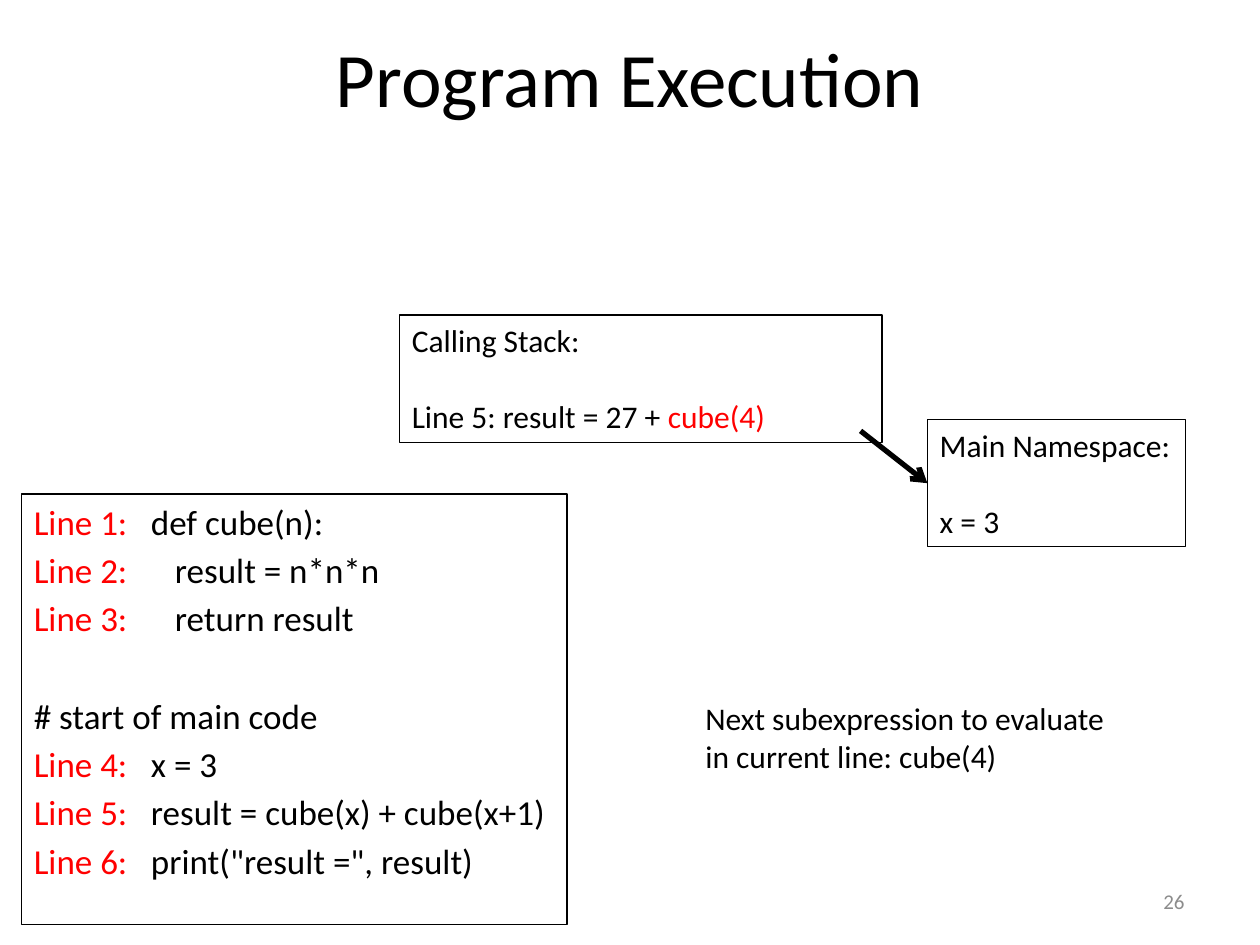
from lxml import etree
from pptx import Presentation
from pptx.dml.color import RGBColor
from pptx.enum.shapes import MSO_CONNECTOR, MSO_SHAPE
from pptx.enum.text import MSO_ANCHOR, PP_ALIGN
from pptx.oxml.ns import qn
from pptx.util import Inches, Pt

RECTANGLE = MSO_SHAPE.RECTANGLE
STRAIGHT = MSO_CONNECTOR.STRAIGHT
TOP, MIDDLE = MSO_ANCHOR.TOP, MSO_ANCHOR.MIDDLE
LEFT, CENTER, RIGHT = PP_ALIGN.LEFT, PP_ALIGN.CENTER, PP_ALIGN.RIGHT
LEFT_SIDE = 1

BLACK, RED, GRAY = "000000", "FF0000", "8C8C8C"
BLANK_LINE = 22  # points: height of one line of 18 point text


def color(value):
    return RGBColor.from_string(value)


class SlideBuilder:
    font = "Calibri"

    def __init__(self, slide):
        self.slide = slide

    def add_paragraphs(self, shape, paragraphs, size, align=LEFT, anchor=TOP, wrap=True):
        """Each paragraph is (space before, tab stop or None, [(text, colour)])."""
        frame = shape.text_frame
        frame.word_wrap = wrap
        frame.vertical_anchor = anchor
        for index, (space, tab, runs) in enumerate(paragraphs):
            paragraph = frame.paragraphs[0] if index == 0 else frame.add_paragraph()
            paragraph.alignment = align
            paragraph.space_before = Pt(space)
            if tab is not None:
                properties = paragraph._p.get_or_add_pPr()
                tabs = etree.SubElement(properties, qn("a:tabLst"))
                etree.SubElement(tabs, qn("a:tab"), pos=str(Inches(tab)), algn="l")
            for text, text_color in runs:
                run = paragraph.add_run()
                run.text = text
                run.font.name = self.font
                run.font.size = Pt(size)
                run.font.color.rgb = color(text_color)

    def text(self, left, top, width, height, paragraphs, size, **layout):
        shape = self.slide.shapes.add_textbox(
            Inches(left), Inches(top), Inches(width), Inches(height))
        self.add_paragraphs(shape, paragraphs, size, **layout)

    def box(self, left, top, width, height, paragraphs, size):
        shape = self.slide.shapes.add_shape(
            RECTANGLE, Inches(left), Inches(top), Inches(width), Inches(height))
        shape.shadow.inherit = False
        shape.fill.background()
        shape.line.color.rgb = color(BLACK)
        shape.line.width = Pt(0.75)
        self.add_paragraphs(shape, paragraphs, size)
        return shape

    def arrow_to(self, left, top, target, side):
        start = Inches(left), Inches(top)
        connector = self.slide.shapes.add_connector(STRAIGHT, *start, *start)
        connector.end_connect(target, side)
        connector.line.color.rgb = color(BLACK)
        connector.line.width = Pt(3)
        properties = connector._element.spPr
        etree.SubElement(properties.find(qn("a:ln")), qn("a:tailEnd"), type="arrow")
        etree.SubElement(properties, qn("a:effectLst"))


def plain(text, space=0, text_color=BLACK):
    return space, None, [(text, text_color)]


def code_line(number, code, level=0, space=3.6):
    tab = 0.93 + 0.19 * level
    return space, tab, [(f"Line {number}:", RED), (f"\t{code}", BLACK)]


def main():
    presentation = Presentation()
    presentation.slide_width = Inches(10)
    presentation.slide_height = Inches(7.5)
    slide = presentation.slides.add_slide(presentation.slide_layouts[6])
    builder = SlideBuilder(slide)

    # Title
    builder.text(0.5, 0.17, 9, 0.88, [plain("Program Execution")], 44,
                 align=CENTER, anchor=MIDDLE)

    # Program listing
    builder.box(0.17, 3.92, 4.33, 3.42, [
        code_line(1, "def cube(n):", space=0),
        code_line(2, "result = n*n*n", level=1),
        code_line(3, "return result", level=1),
        plain("# start of main code", space=31.6),
        code_line(4, "x = 3"),
        code_line(5, "result = cube(x) + cube(x+1)"),
        code_line(6, 'print("result =", result)'),
    ], 20)

    # Slide number
    builder.text(7.17, 6.95, 2.33, 0.4, [plain("26", text_color=GRAY)], 12,
                 align=RIGHT, anchor=MIDDLE)

    # Namespace and calling stack
    namespace = builder.box(7.36, 3.33, 2.05, 1.01, [
        plain("Main Namespace:"),
        plain("x = 3", space=BLANK_LINE),
    ], 18)
    builder.box(3.17, 2.5, 3.83, 1.01, [
        plain("Calling Stack:"),
        (BLANK_LINE, None, [("Line 5: result = 27 + ", BLACK), ("cube(4)", RED)]),
    ], 18)
    builder.arrow_to(6.83, 3.42, namespace, LEFT_SIDE)

    # Next step
    builder.text(5.5, 5.5, 3.4, 0.71, [
        plain("Next subexpression to evaluate"),
        plain("in current line: cube(4)"),
    ], 18, wrap=False)

    presentation.save("out.pptx")


if __name__ == "__main__":
    main()
